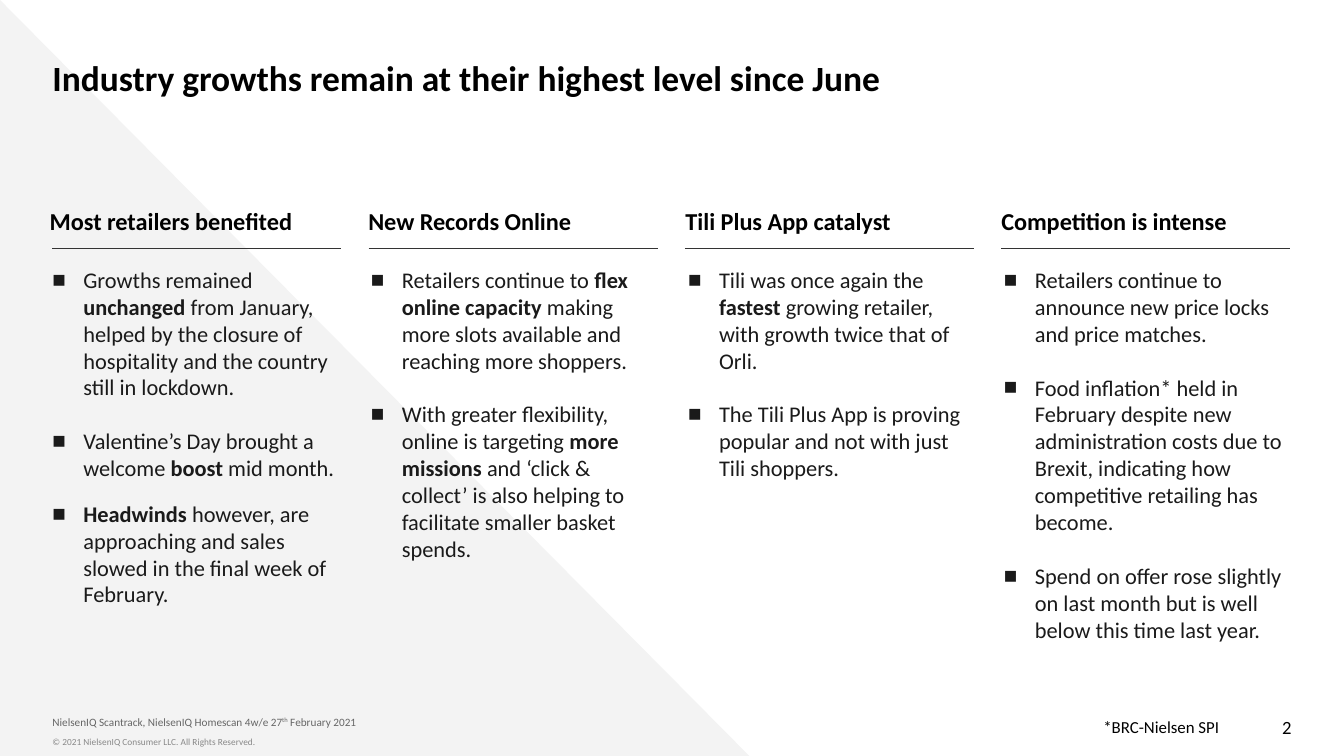
from lxml.etree import SubElement
from pptx import Presentation
from pptx.dml.color import RGBColor
from pptx.enum.shapes import MSO_CONNECTOR, MSO_SHAPE
from pptx.enum.text import MSO_ANCHOR, PP_ALIGN
from pptx.oxml.ns import qn
from pptx.util import Inches, Pt

COLORS = {
    "black": "000000",
    "body": "1A1A1A",
    "rule": "333333",
    "source": "666666",
    "copyright": "888888",
    "triangle": "F3F3F3",
}
COLUMN_WIDTH = 2.15
FIRST_LEFT, LAST_RIGHT = 0.39, 9.6

COLUMNS = [
    (0.37, "Most retailers benefited", [
        (0, "Growths remained **unchanged **from January, helped by the closure of "
            "hospitality and the country still in lockdown."),
        (14.5, "Valentine’s Day brought a welcome **boost** mid month."),
        (10, "**Headwinds** however, are approaching and sales slowed in the final "
             "week of February."),
    ]),
    (2.74, "New Records Online", [
        (0, "Retailers continue to **flex online capacity** making more slots "
            "available and reaching more shoppers."),
        (14.5, "With greater flexibility, online is targeting** more missions **and "
               "‘click & collect’ is also helping to facilitate smaller basket spends."),
    ]),
    (5.1, "Tili Plus App catalyst", [
        (0, "Tili was once again the **fastest** growing retailer, with growth twice "
            "that of Orli."),
        (14.5, "The Tili Plus App is proving popular and not with just Tili shoppers."),
    ]),
    (7.45, "Competition is intense", [
        (0, "Retailers continue to announce new price locks and price matches."),
        (14.5, "Food inflation* held in February despite new administration costs due "
               "to Brexit, indicating how competitive retailing has become."),
        (14.5, "Spend on offer rose slightly on last month but is well below this time "
               "last year."),
    ]),
]


def set_up_frame(shape, left, top, width, height, inset, anchor=MSO_ANCHOR.TOP):
    shape.left, shape.top = Inches(left), Inches(top)
    shape.width, shape.height = Inches(width), Inches(height)
    frame = shape.text_frame
    frame.word_wrap = True
    frame.vertical_anchor = anchor
    frame.margin_left = frame.margin_right = 0
    frame.margin_top = frame.margin_bottom = Inches(inset)
    return frame


def add_run(paragraph, text, size, color, bold=False):
    run = paragraph.add_run()
    run.text = text
    run.font.name = "Calibri"
    run.font.size = Pt(size)
    run.font.bold = bold
    run.font.color.rgb = RGBColor.from_string(COLORS[color])
    return run


presentation = Presentation()
presentation.slide_width = Inches(10)
presentation.slide_height = Inches(10) * 9 // 16
slide = presentation.slides.add_slide(presentation.slide_layouts[5])
shapes = slide.shapes

triangle = shapes.add_shape(
    MSO_SHAPE.RIGHT_TRIANGLE, 0, 0, Inches(5.59), Inches(5.64))
triangle.shadow.inherit = False
triangle.fill.solid()
triangle.fill.fore_color.rgb = RGBColor.from_string(COLORS["triangle"])
triangle.line.fill.background()
shapes._spTree.insert(2, triangle._element)

title = set_up_frame(shapes.title, FIRST_LEFT, 0.32, 9.22, 0.43, 0.1)
title.paragraphs[0].alignment = PP_ALIGN.LEFT
add_run(title.paragraphs[0], "Industry growths remain at their highest level since June",
        19, "black", True)

pitch = (LAST_RIGHT - COLUMN_WIDTH - FIRST_LEFT) / (len(COLUMNS) - 1)
for index, (text_left, heading, bullets) in enumerate(COLUMNS):
    rule_left = FIRST_LEFT + index * pitch
    rule = shapes.add_connector(
        MSO_CONNECTOR.STRAIGHT, Inches(rule_left), Inches(1.85),
        Inches(rule_left + COLUMN_WIDTH), Inches(1.85))
    rule.line.color.rgb = RGBColor.from_string(COLORS["rule"])
    rule.line.width = Pt(0.75)
    SubElement(rule._element.spPr, qn("a:effectLst"))

    body = set_up_frame(shapes.add_textbox(0, 0, 0, 0), text_left, 1.93,
                        COLUMN_WIDTH, 1.29, 0.05)
    for number, (space_before, text) in enumerate(bullets):
        paragraph = body.add_paragraph() if number else body.paragraphs[0]
        properties = paragraph._p.get_or_add_pPr()
        properties.set("marL", str(Inches(0.25)))
        properties.set("indent", str(Inches(-0.23)))
        SubElement(properties, qn("a:buFont")).set("typeface", "Arial")
        SubElement(properties, qn("a:buChar")).set("char", "■")
        if space_before:
            paragraph.space_before = Pt(space_before)
        for part, words in enumerate(text.split("**")):
            if words:
                add_run(paragraph, words, 12, "body", part % 2 == 1)

    heading_frame = set_up_frame(shapes.add_textbox(0, 0, 0, 0), text_left, 1.42,
                                 COLUMN_WIDTH, 0.43, 0.1, MSO_ANCHOR.BOTTOM)
    add_run(heading_frame.paragraphs[0], heading, 13, "black", True)

source = set_up_frame(shapes.add_textbox(0, 0, 0, 0), FIRST_LEFT, 5.16, 8.92, 0.31, 0.1,
                      MSO_ANCHOR.BOTTOM).paragraphs[0]
add_run(source, "NielsenIQ Scantrack, NielsenIQ Homescan 4w/e 27", 6, "source")
ordinal = add_run(source, "th", 6, "source")
ordinal.font._element.set("baseline", "30000")
add_run(source, " February 2021", 6, "source")

copyright_frame = set_up_frame(
    shapes.add_textbox(0, 0, 0, 0), FIRST_LEFT, 5.43, 5.54, 0.2, 0.05)
add_run(copyright_frame.paragraphs[0],
        "© 2021 NielsenIQ Consumer LLC. All Rights Reserved.", 5, "copyright")

footnote = set_up_frame(shapes.add_textbox(0, 0, 0, 0), 8.21, 5.28, 1.0, 0.25, 0.05)
footnote.word_wrap = False
add_run(footnote.paragraphs[0], "*BRC-Nielsen SPI", 9, "black")

page_number = set_up_frame(shapes.add_textbox(0, 0, 0, 0), 7.36, 5.26, 2.25, 0.3, 0.05,
                           MSO_ANCHOR.MIDDLE).paragraphs[0]
page_number.alignment = PP_ALIGN.RIGHT
add_run(page_number, "2", 10, "black")

presentation.save("out.pptx")
